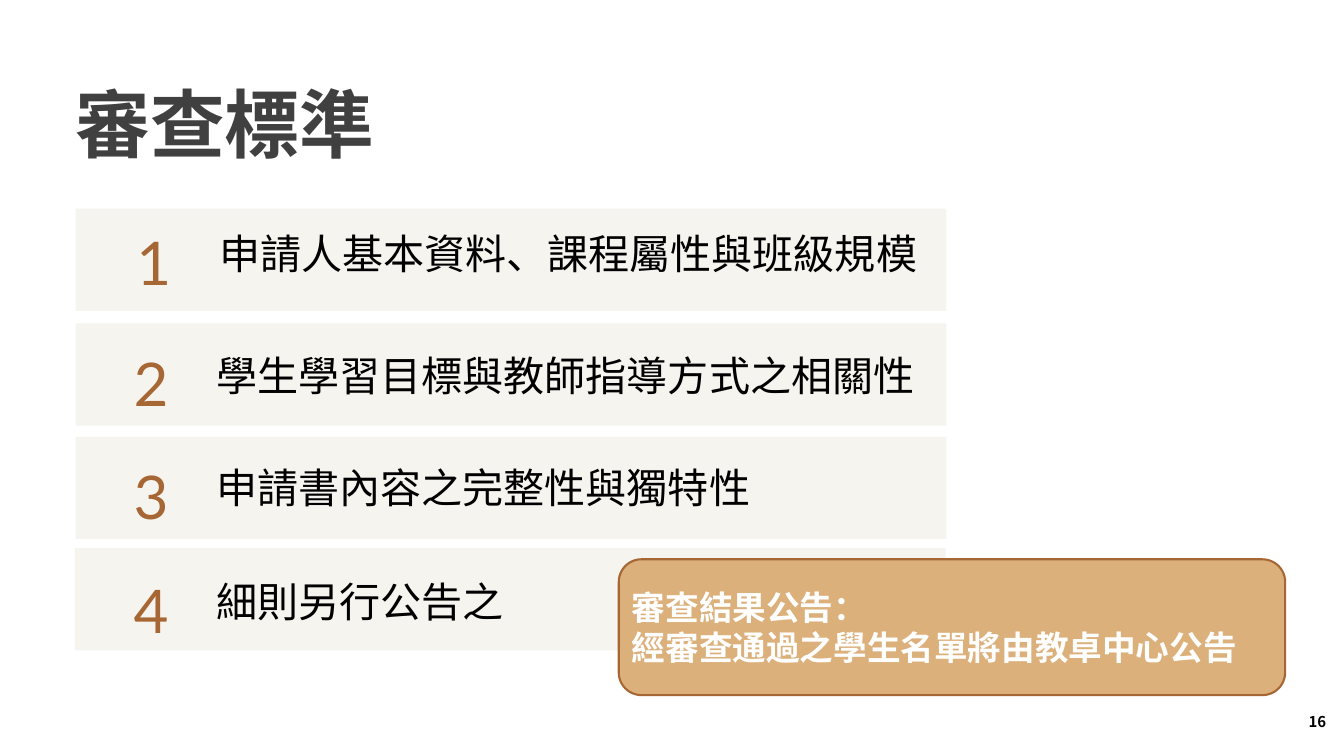
from lxml.etree import SubElement
from pptx import Presentation
from pptx.dml.color import RGBColor
from pptx.enum.shapes import MSO_SHAPE as Shape
from pptx.enum.text import MSO_ANCHOR as Anchor, MSO_AUTO_SIZE as AutoSize, PP_ALIGN as Align
from pptx.oxml.ns import qn
from pptx.util import Emu, Pt

PX = 9525
CJK, LATIN = "Noto Sans CJK SC", "Lato"
COLORS = {
    "band": "F6F4EF",
    "title": "404040",
    "accent": "A66735",
    "notice": "DCB07B",
    "black": "000000",
    "white": "FFFFFF",
}
CRITERIA = [
    ("申請人基本資料、課程屬性與班級規模", (108, 298), (87, 7)),
    ("學生學習目標與教師指導方式之相關性", (108, 462), (83, 16)),
    ("申請書內容之完整性與獨特性", (108, 624), (83, 15)),
    ("細則另行公告之", (107, 783), (84, 19)),
]


def px(*values):
    """Turn pixel lengths into EMU."""
    return [Emu(v * PX) for v in values]


def color(name):
    """Look up a palette colour."""
    return RGBColor.from_string(COLORS[name])


def write(sp, text, *, size, fill="black", font=CJK, bold=False, align=Align.LEFT,
          anchor=Anchor.TOP, spacing=None, inset=True, grow=False):
    """Write text into a shape, one paragraph a line."""
    tf = sp.text_frame
    tf.word_wrap = True
    tf.auto_size = AutoSize.SHAPE_TO_FIT_TEXT if grow else AutoSize.NONE
    tf.vertical_anchor = anchor
    if not inset:
        tf.margin_left = tf.margin_top = tf.margin_right = tf.margin_bottom = 0
    for i, line in enumerate(text.split("\n")):
        p = tf.add_paragraph() if i else tf.paragraphs[0]
        p.alignment = align
        if spacing:
            p.line_spacing = Pt(spacing)
        r = p.add_run()
        r.text = line
        r.font.size, r.font.bold, r.font.name = Pt(size), bold, font
        r.font.color.rgb = color(fill)
        SubElement(r.font._element, qn("a:ea"), typeface=font)


def add_box(s, kind, box, fill, line=None):
    """Add a filled shape with an optional outline."""
    sp = s.shapes.add_shape(kind, *px(*box))
    sp.shadow.inherit = False
    sp.fill.solid()
    sp.fill.fore_color.rgb = color(fill)
    if line:
        sp.line.color.rgb = color(line)
        sp.line.width = Pt(2.25)
    else:
        sp.line.fill.background()
    return sp


def add_text(s, box, text, **style):
    """Add a text box."""
    write(s.shapes.add_textbox(*px(*box)), text, **style)


def add_title(s, box, text):
    """Place and fill the title placeholder."""
    sp = s.shapes.title
    sp.left, sp.top, sp.width, sp.height = px(*box)
    write(sp, text, size=80, fill="title", bold=True, inset=False, grow=True)


def add_criterion(s, box, number, text, offset):
    """Draw a band with its number and wording."""
    left, top = box[0] + offset[0], box[1] + offset[1]
    add_box(s, Shape.RECTANGLE, box, "band")
    add_text(s, (left, top, 47, 116), str(number), size=64.5, fill="accent",
             font=LATIN, spacing=90.3, inset=False, grow=True)
    add_text(s, (left + 118, top + 22, 1022, 71), text, size=44, inset=False, grow=True)


def add_notice(s, box, text):
    """Draw the rounded announcement panel."""
    sp = add_box(s, Shape.ROUNDED_RECTANGLE, box, "notice", "accent")
    write(sp, text, size=36, fill="white", bold=True, anchor=Anchor.MIDDLE)


def main():
    """Build the slide and save it."""
    prs = Presentation()
    prs.slide_width, prs.slide_height = px(1920, 1080)
    s = prs.slides.add_slide(prs.slide_layouts[5])
    add_title(s, (108, 111, 636, 130), "審查標準")
    for number, (text, origin, offset) in enumerate(CRITERIA, 1):
        add_criterion(s, (*origin, 1244, 146), number, text, offset)
    add_notice(s, (884, 799, 952, 194), "審查結果公告：\n經審查通過之學生名單將由教卓中心公告")
    add_text(s, (1680, 1012, 224, 38), "16", size=16, bold=True,
             align=Align.RIGHT, anchor=Anchor.MIDDLE)
    prs.save("out.pptx")


if __name__ == "__main__":
    main()
